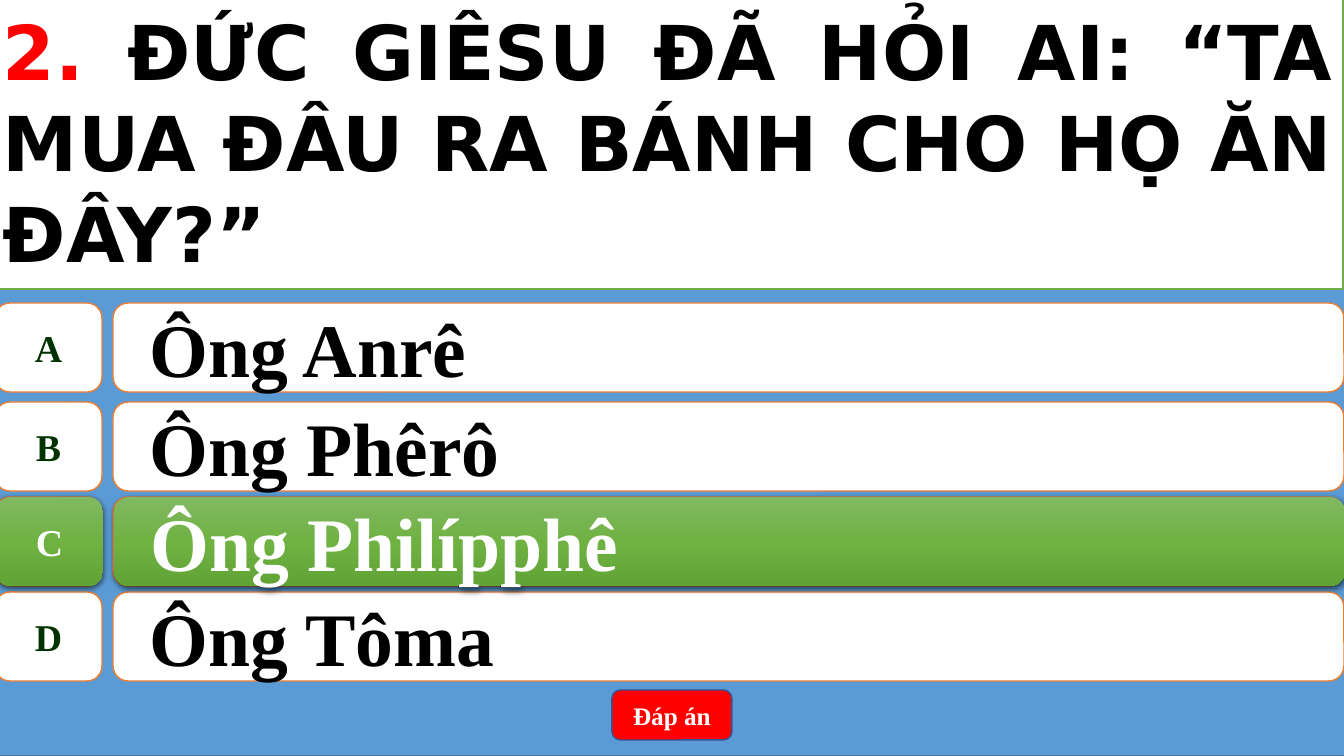
import copy
import lxml.etree
import pptx
import pptx.dml.color
import pptx.enum.shapes
import pptx.enum.text
import pptx.oxml.ns
import pptx.util

RGB = pptx.dml.color.RGBColor
SHAPES = pptx.enum.shapes.MSO_SHAPE
ALIGN = pptx.enum.text.PP_ALIGN
qn = pptx.oxml.ns.qn

WHITE = RGB(0xFF, 0xFF, 0xFF)
BLACK = RGB(0x00, 0x00, 0x00)
RED = RGB(0xFF, 0x00, 0x00)
DARK_GREEN = RGB(0x00, 0x33, 0x00)
GREEN = RGB(0x70, 0xAD, 0x47)
ORANGE = RGB(0xED, 0x7D, 0x31)
BLUE = RGB(0x5B, 0x9B, 0xD5)
DARK_BLUE = RGB(0x43, 0x73, 0x9E)
BUTTON_BLUE = RGB(0x32, 0x54, 0x91)
GRADIENT = [(0, RGB(0x81, 0xB8, 0x61)), (0.5, RGB(0x6F, 0xB2, 0x42)), (1, RGB(0x62, 0xA3, 0x36))]

SERIF = "Times New Roman"
SANS = "DejaVu Sans"

QUESTION = [
    ("2. ", RED),
    ("ĐỨC GIÊSU ĐÃ HỎI AI: “TA MUA ĐÂU RA BÁNH CHO HỌ ĂN ĐÂY?”", BLACK),
]
ANSWERS = [
    ("A", "Ông Anrê", 303),
    ("B", "Ông Phêrô", 402),
    ("C", "Ông Philípphê", 497),
    ("D", "Ông Tôma", 592),
]
CORRECT = 2
BUTTON = "Đáp án"

WIDTH, HEIGHT = 1344, 756
LETTER_LEFT, LETTER_WIDTH = -5, 107
ANSWER_LEFT, ANSWER_WIDTH = 113, 1231
ROW_HEIGHT = 89


def px(length):
    return pptx.util.Emu(round(length * 914400 / 100.8))


presentation = pptx.Presentation()
presentation.slide_width = px(WIDTH)
presentation.slide_height = px(HEIGHT)
slide = presentation.slides.add_slide(presentation.slide_layouts[6])


def add_box(kind, left, top, width, height, fill, line):
    shape = slide.shapes.add_shape(kind, px(left), px(top), px(width), px(height))
    shape.shadow.inherit = False
    if fill is None:
        highlight(shape)
    else:
        shape.fill.solid()
        shape.fill.fore_color.rgb = fill
        shape.line.color.rgb = line
        shape.line.width = pptx.util.Pt(1)
    return shape


def highlight(shape):
    shape.line.fill.background()
    shape.fill.gradient()
    shape.fill.gradient_angle = 270
    properties = shape._element.spPr
    stops = properties.find(".//" + qn("a:gsLst"))
    stops.insert(1, copy.deepcopy(stops[0]))
    for stop, (position, color) in zip(shape.fill.gradient_stops, GRADIENT):
        stop.position = position
        stop.color.rgb = color
    shadow = lxml.etree.SubElement(
        properties.find(qn("a:effectLst")), qn("a:outerShdw"),
        blurRad="57150", dist="19050", dir="5400000", algn="ctr", rotWithShape="0")
    black = lxml.etree.SubElement(shadow, qn("a:srgbClr"), val="000000")
    lxml.etree.SubElement(black, qn("a:alpha"), val="63000")


def write(shape, runs, size, font, alignment, wrap=True):
    frame = shape.text_frame
    frame.word_wrap = wrap
    frame.vertical_anchor = pptx.enum.text.MSO_ANCHOR.MIDDLE
    paragraph = frame.paragraphs[0]
    paragraph.alignment = alignment
    for text, color in runs:
        run = paragraph.add_run()
        run.text = text
        run.font.size = pptx.util.Pt(size)
        run.font.name = font
        run.font.bold = True
        run.font.color.rgb = color
    return paragraph


def add_answer(letter, text, top, shift, fill, letter_color, text_color):
    letter_box = add_box(SHAPES.FLOWCHART_ALTERNATE_PROCESS, LETTER_LEFT + shift, top,
                         LETTER_WIDTH, ROW_HEIGHT, fill, ORANGE)
    write(letter_box, [(letter, letter_color)], 27, SERIF, ALIGN.CENTER, wrap=False)
    answer_box = add_box(SHAPES.ROUNDED_RECTANGLE, ANSWER_LEFT + shift, top,
                         ANSWER_WIDTH, ROW_HEIGHT, fill, ORANGE)
    answer_box.adjustments[0] = 0.17
    paragraph = write(answer_box, [(text, text_color)], 54, SERIF, ALIGN.LEFT)
    paragraph.level = 1
    indents = paragraph._p.get_or_add_pPr()
    indents.set("marL", str(px(50)))
    indents.set("indent", str(px(-28)))


add_box(SHAPES.RECTANGLE, -5, 0, 1350, HEIGHT, BLUE, DARK_BLUE)

for letter, text, top in ANSWERS:
    add_answer(letter, text, top, 0, WHITE, DARK_GREEN, BLACK)
add_answer(*ANSWERS[CORRECT], 1, None, WHITE, WHITE)

button = add_box(SHAPES.ROUNDED_RECTANGLE, 612, 690, 120, 50, RED, BUTTON_BLUE)
write(button, [(BUTTON, WHITE)], 18, SERIF, ALIGN.CENTER)

question = add_box(SHAPES.RECTANGLE, -7, -7, 1350, 296, WHITE, GREEN)
write(question, QUESTION, 54, SANS, ALIGN.JUSTIFY)

presentation.save("out.pptx")
